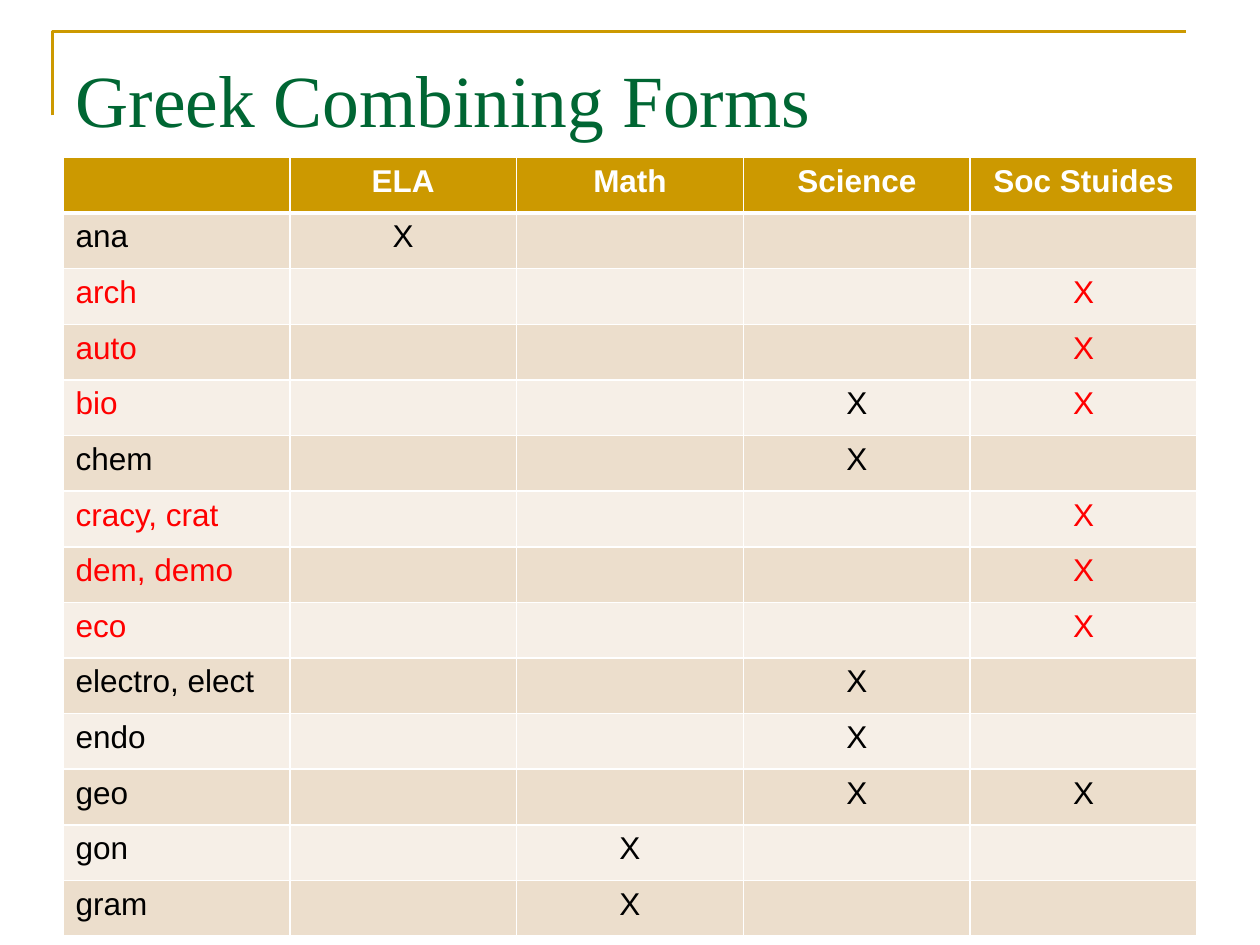
"""Build a slide with a table of Greek combining forms by school subject."""
import pptx
import pptx.dml.color
import pptx.enum.text
import pptx.oxml
import pptx.oxml.ns
import pptx.util

Pt = pptx.util.Pt
ALIGN = pptx.enum.text.PP_ALIGN
GOLD, GREEN, WHITE, BLACK, RED = "CC9900", "006633", "FFFFFF", "000000", "FF0000"
BANDS = ("ECDECC", "F6EFE7")
SUBJECTS = ("ELA", "Math", "Science", "Soc Stuides")
SOCIAL = SUBJECTS[3]
FORMS = (
    ("ana", BLACK, ("ELA",)),
    ("arch", RED, (SOCIAL,)),
    ("auto", RED, (SOCIAL,)),
    ("bio", RED, ("Science", SOCIAL)),
    ("chem", BLACK, ("Science",)),
    ("cracy, crat", RED, (SOCIAL,)),
    ("dem, demo", RED, (SOCIAL,)),
    ("eco", RED, (SOCIAL,)),
    ("electro, elect", BLACK, ("Science",)),
    ("endo", BLACK, ("Science",)),
    ("geo", BLACK, ("Science", SOCIAL)),
    ("gon", BLACK, ("Math",)),
    ("gram", BLACK, ("Math",)),
)


def color(value):
    return pptx.dml.color.RGBColor.from_string(value)


class SlideBuilder:
    heading_font = "Times New Roman"
    body_font = "Arial"

    def __init__(self, presentation):
        self.slide = presentation.slides.add_slide(presentation.slide_layouts[5])

    def add_run(self, paragraph, text, font, size, ink, bold=False):
        run = paragraph.add_run()
        run.text = text
        run.font.name = font
        run.font.size = Pt(size)
        run.font.bold = bold
        run.font.color.rgb = color(ink)

    def title(self, text, left, top, width, height):
        heading = self.slide.shapes.title
        heading.left, heading.top = Pt(left), Pt(top)
        heading.width, heading.height = Pt(width), Pt(height)
        frame = heading.text_frame
        frame.word_wrap = True
        frame.auto_size = pptx.enum.text.MSO_AUTO_SIZE.NONE
        frame.vertical_anchor = pptx.enum.text.MSO_ANCHOR.TOP
        frame.margin_top = Pt(9)
        frame.paragraphs[0].alignment = ALIGN.LEFT
        self.add_run(frame.paragraphs[0], text, self.heading_font, 42, GREEN)

    def corner_rule(self, start, *points):
        outline = self.slide.shapes.build_freeform(Pt(start[0]), Pt(start[1]))
        outline.add_line_segments([(Pt(x), Pt(y)) for x, y in points], close=False)
        rule = outline.convert_to_shape()
        rule.shadow.inherit = False
        rule.fill.background()
        rule.line.color.rgb = color(GOLD)
        rule.line.width = Pt(1.5)

    def borders(self, cell, top, bottom):
        properties = cell._tc.get_or_add_tcPr()
        for side, width in (("L", 1), ("R", 1), ("T", top), ("B", bottom)):
            properties.append(pptx.oxml.parse_xml(
                f'<a:ln{side} {pptx.oxml.ns.nsdecls("a")} w="{Pt(width)}">'
                f'<a:solidFill><a:srgbClr val="{WHITE}"/></a:solidFill></a:ln{side}>'))

    def cell(self, cell, text, ink, fill, centered, bold=False, top=1, bottom=1):
        self.borders(cell, top, bottom)
        cell.fill.solid()
        cell.fill.fore_color.rgb = color(fill)
        paragraph = cell.text_frame.paragraphs[0]
        paragraph.alignment = ALIGN.CENTER if centered else ALIGN.LEFT
        if text:
            self.add_run(paragraph, text, self.body_font, 18, ink, bold)

    def subject_table(self, left, top, width, height):
        rows, columns = len(FORMS) + 1, len(SUBJECTS) + 1
        table = self.slide.shapes.add_table(
            rows, columns, Pt(left), Pt(top), Pt(width), Pt(height)).table
        for column, subject in enumerate(("",) + SUBJECTS):
            self.cell(table.cell(0, column), subject, WHITE, GOLD, True, bold=True, bottom=3)
        for row, (form, ink, marked) in enumerate(FORMS, 1):
            band = BANDS[(row - 1) % 2]
            edge = 3 if row == 1 else 1
            self.cell(table.cell(row, 0), form, ink, band, False, top=edge)
            for column, subject in enumerate(SUBJECTS, 1):
                mark = "X" if subject in marked else ""
                mark_ink = ink if subject == SOCIAL else BLACK
                self.cell(table.cell(row, column), mark, mark_ink, band, True, top=edge)


def main():
    presentation = pptx.Presentation()
    presentation.slide_width, presentation.slide_height = Pt(720), Pt(540)
    builder = SlideBuilder(presentation)
    builder.corner_rule((30, 66), (30, 18), (678, 18))
    builder.title("Greek Combining Forms", 36, 21.6, 648, 90)
    builder.subject_table(36, 90, 648, 445)
    presentation.save("out.pptx")


if __name__ == "__main__":
    main()
